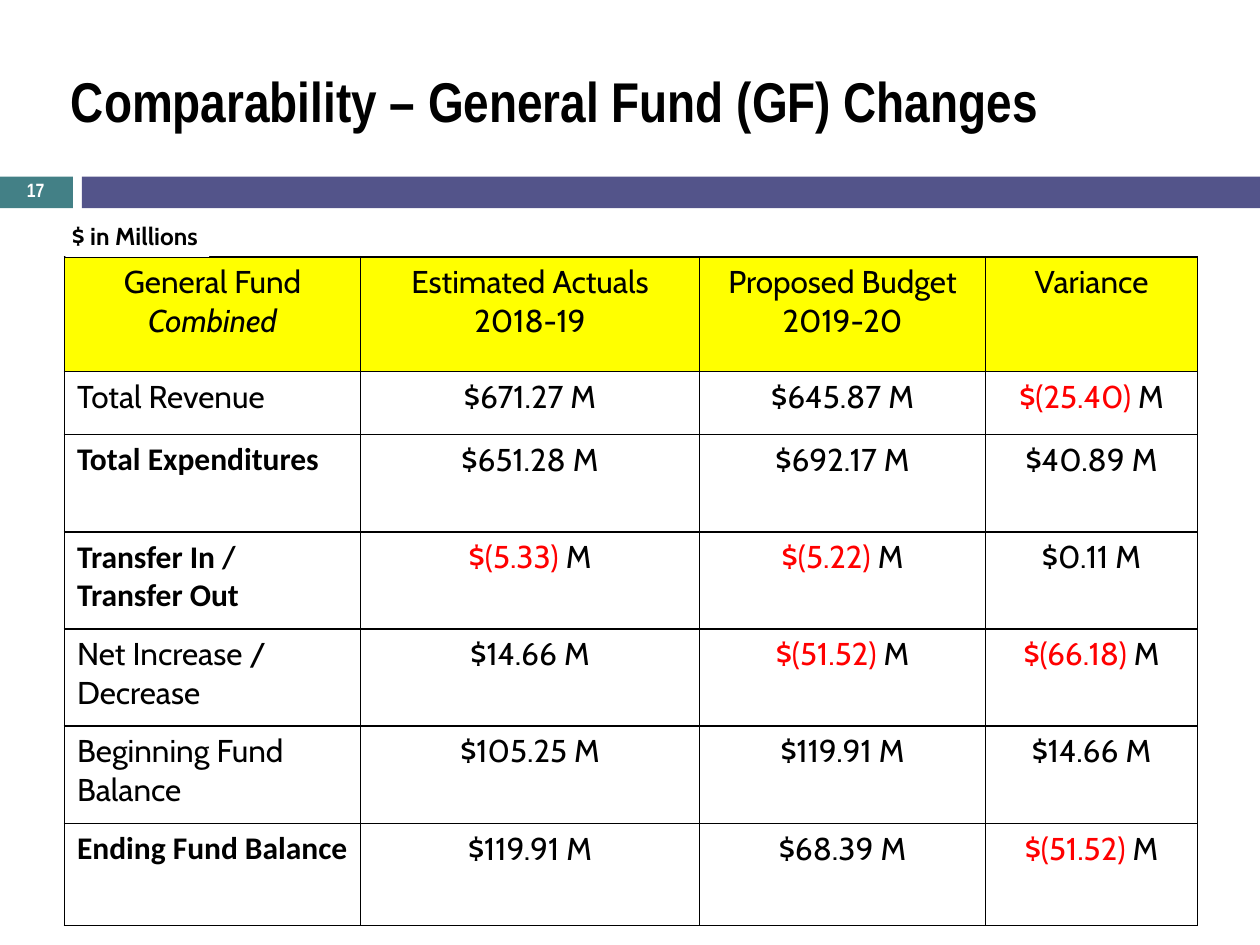
from lxml import etree
from pptx import Presentation
from pptx.dml.color import RGBColor
from pptx.enum.shapes import MSO_SHAPE
from pptx.enum.text import MSO_ANCHOR, MSO_AUTO_SIZE, PP_ALIGN
from pptx.oxml.ns import qn
from pptx.util import Cm, Pt

# Content
TITLE = "Comparability – General Fund (GF) Changes"
PAGE_NUMBER = "17"
UNIT_NOTE = "$ in Millions"
HEADER = [
    ["General Fund Combined"],
    ["Estimated Actuals", "2018-19"],
    ["Proposed Budget", "2019-20"],
    ["Variance"],
]
ROWS = [
    ("Total Revenue", "$671.27 M", "$645.87 M", "$(25.40) M"),
    ("Total Expenditures", "$651.28 M", "$692.17 M", "$40.89 M"),
    ("Transfer In / Transfer Out", "$(5.33) M", "$(5.22) M", "$0.11 M"),
    ("Net Increase / Decrease", "$14.66 M", "$(51.52) M", "$(66.18) M"),
    ("Beginning Fund Balance", "$105.25 M", "$119.91 M", "$14.66 M"),
    ("Ending Fund Balance", "$119.91 M", "$68.39 M", "$(51.52) M"),
]
CALIBRI_LABELS = {"Total Expenditures", "Transfer In / Transfer Out", "Ending Fund Balance"}

# Format
COLORS = {
    "teal": "438086", "indigo": "53548A", "header": "FFFF00",
    "white": "FFFFFF", "black": "000000", "negative": "FF0000",
}
COLUMN_WIDTHS = [5.97, 6.83, 5.77, 4.27]
ROW_HEIGHTS = [2.31, 1.27] + [1.96] * 4 + [2.06]
BAND_TOP, BAND_HEIGHT = 3.56, 0.64
SLIDE_WIDTH = 25.4


def color(name):
    return RGBColor.from_string(COLORS[name])


def add_text(paragraph, text, font="Cabin", size=18, color_name="black",
             bold=False, italic=False, align=PP_ALIGN.LEFT):
    paragraph.alignment = align
    run = paragraph.add_run()
    run.text = text
    run.font.name = font
    run.font.size = Pt(size)
    run.font.bold = bold
    run.font.italic = italic
    run.font.color.rgb = color(color_name)


def set_frame(frame, anchor, wrap=True):
    frame.margin_left = frame.margin_right = Cm(0.13)
    frame.margin_top = frame.margin_bottom = Cm(0.13)
    frame.vertical_anchor = anchor
    frame.word_wrap = wrap
    frame.auto_size = MSO_AUTO_SIZE.NONE
    return frame.paragraphs[0]


def add_rectangle(slide, left, top, width, height, fill):
    shape = slide.shapes.add_shape(
        MSO_SHAPE.RECTANGLE, Cm(left), Cm(top), Cm(width), Cm(height))
    shape.shadow.inherit = False
    shape.fill.solid()
    shape.fill.fore_color.rgb = color(fill)
    shape.line.fill.background()
    return shape


def style_cell(cell, fill):
    properties = cell._tc.get_or_add_tcPr()
    for side in ("a:lnL", "a:lnR", "a:lnT", "a:lnB"):
        line = etree.SubElement(properties, qn(side), w=str(Pt(1)))
        solid = etree.SubElement(line, qn("a:solidFill"))
        etree.SubElement(solid, qn("a:srgbClr"), val=COLORS["black"])
    cell.fill.solid()
    cell.fill.fore_color.rgb = color(fill)


def fill_header(cell, lines):
    style_cell(cell, "header")
    for index, line in enumerate(lines):
        frame = cell.text_frame
        paragraph = frame.add_paragraph() if index else frame.paragraphs[0]
        start, emphasis, _ = line.partition("Combined")
        add_text(paragraph, start, align=PP_ALIGN.CENTER)
        if emphasis:
            add_text(paragraph, emphasis, italic=True, align=PP_ALIGN.CENTER)


def fill_amount(cell, amount):
    paragraph = cell.text_frame.paragraphs[0]
    if "(" in amount:
        number, unit = amount.split()
        add_text(paragraph, number + " ", color_name="negative", align=PP_ALIGN.CENTER)
        add_text(paragraph, unit, align=PP_ALIGN.CENTER)
    else:
        add_text(paragraph, amount, align=PP_ALIGN.CENTER)


def add_fund_table(slide):
    table = slide.shapes.add_table(
        len(ROW_HEIGHTS), len(COLUMN_WIDTHS), Cm(1.3), Cm(5.18),
        Cm(sum(COLUMN_WIDTHS)), Cm(sum(ROW_HEIGHTS))).table
    for column, width in zip(table.columns, COLUMN_WIDTHS):
        column.width = Cm(width)
    for row, height in zip(table.rows, ROW_HEIGHTS):
        row.height = Cm(height)
    for column_index, lines in enumerate(HEADER):
        fill_header(table.cell(0, column_index), lines)
    for row_index, (label, *amounts) in enumerate(ROWS, start=1):
        cell = table.cell(row_index, 0)
        style_cell(cell, "white")
        special = label in CALIBRI_LABELS
        add_text(cell.text_frame.paragraphs[0], label,
                 font="Calibri" if special else "Cabin", bold=special)
        for column_index, amount in enumerate(amounts, start=1):
            cell = table.cell(row_index, column_index)
            style_cell(cell, "white")
            fill_amount(cell, amount)


def main():
    presentation = Presentation()
    presentation.slide_width, presentation.slide_height = Cm(SLIDE_WIDTH), Cm(19.05)
    slide = presentation.slides.add_slide(presentation.slide_layouts[5])

    # Bands under the title
    add_rectangle(slide, 0, BAND_TOP, 1.47, BAND_HEIGHT, "teal")
    add_rectangle(slide, 1.65, BAND_TOP, SLIDE_WIDTH - 1.65, BAND_HEIGHT, "indigo")

    # Title
    title = slide.shapes.title
    title.left, title.top, title.width, title.height = Cm(1.3), Cm(0.64), Cm(23.47), Cm(2.74)
    paragraph = set_frame(title.text_frame, MSO_ANCHOR.MIDDLE)
    add_text(paragraph, TITLE, font="Arial Narrow", size=32, bold=True)

    # Page number
    number_box = slide.shapes.add_textbox(Cm(0.48), Cm(3.53), Cm(0.48), Cm(0.69))
    paragraph = set_frame(number_box.text_frame, MSO_ANCHOR.MIDDLE, wrap=False)
    paragraph.line_spacing = 0.8
    add_text(paragraph, PAGE_NUMBER, font="Arial Narrow", size=11,
             color_name="white", bold=True, align=PP_ALIGN.CENTER)

    # Table and its unit note
    add_fund_table(slide)
    note = add_rectangle(slide, 1.32, 4.32, 2.9, 0.86, "white")
    paragraph = set_frame(note.text_frame, MSO_ANCHOR.TOP)
    add_text(paragraph, UNIT_NOTE, size=14, bold=True)

    presentation.save("out.pptx")


if __name__ == "__main__":
    main()
